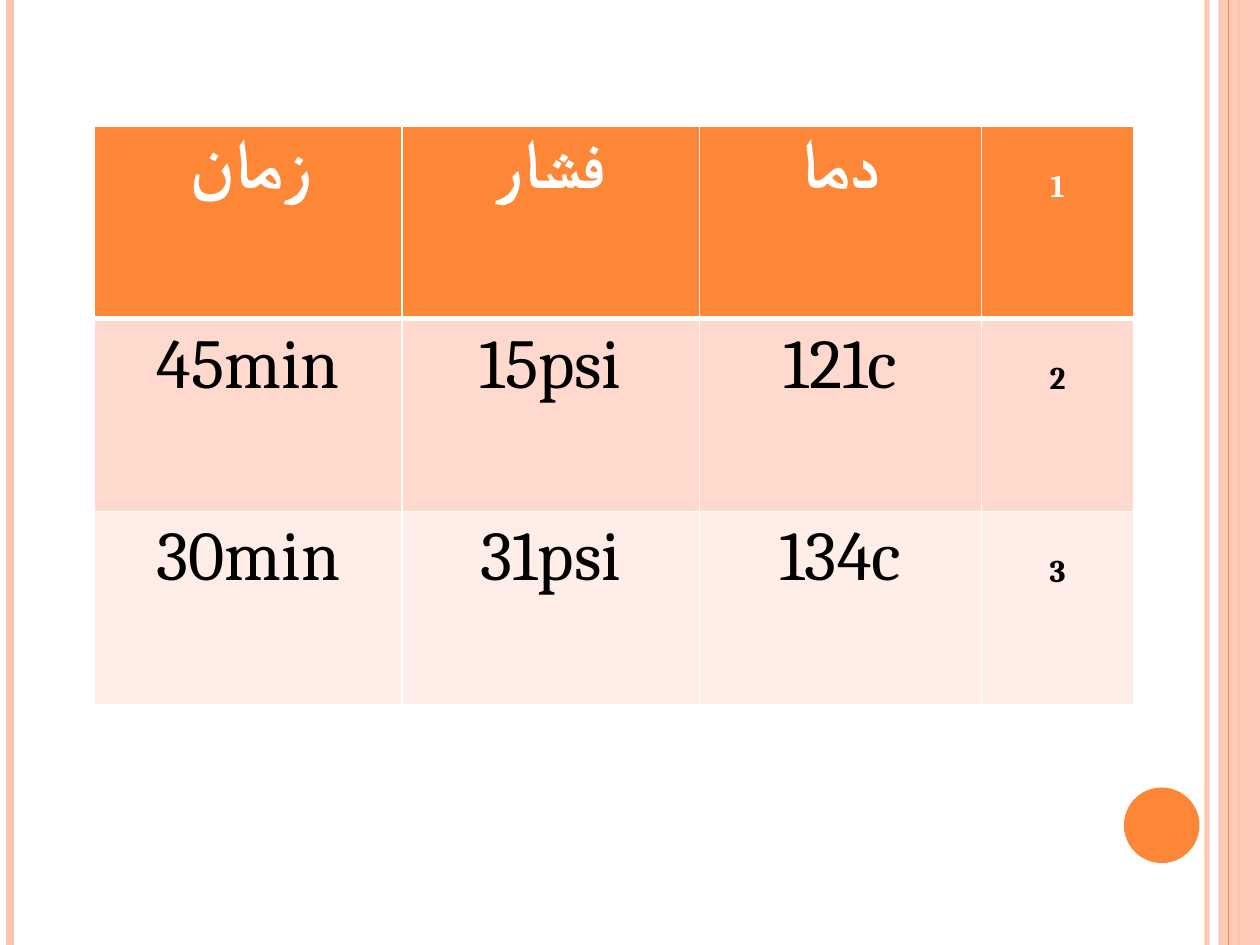
from dataclasses import dataclass

from lxml.etree import SubElement
from pptx import Presentation
from pptx.dml.color import RGBColor as RGB
from pptx.enum.shapes import MSO_CONNECTOR as CONN, MSO_SHAPE as SHAPE
from pptx.enum.text import PP_ALIGN as ALIGN
from pptx.oxml.ns import qn
from pptx.util import Inches, Pt


@dataclass(frozen=True)
class Theme:
    font: str = "Cambria"
    accent: str = "FE8637"
    tint: str = "FEC3AE"
    band_dark: str = "FFD9CE"
    band_light: str = "FFEDE8"
    white: str = "FFFFFF"
    black: str = "000000"
    value_size: int = 40
    index_size: int = 18


class SlideBuilder:
    def __init__(self, prs, theme):
        self.theme = theme
        self.slide = prs.slides.add_slide(prs.slide_layouts[6])

    def set_alpha(self, element, percent):
        color = next(element.iter(qn("a:srgbClr")))
        SubElement(color, qn("a:alpha"), val=str(percent * 1000))

    def vertical_line(self, x, color, width, alpha=100):
        line = self.slide.shapes.add_connector(
            CONN.STRAIGHT, Inches(x), 0, Inches(x), Inches(7.5))
        line.line.color.rgb = RGB.from_string(color)
        line.line.width = Pt(width)
        spPr = line._element.spPr
        if alpha < 100:
            self.set_alpha(spPr, alpha)
        SubElement(spPr, qn("a:effectLst"))

    def shape(self, kind, x, y, w, h, color, alpha=100):
        sp = self.slide.shapes.add_shape(
            kind, Inches(x), Inches(y), Inches(w), Inches(h))
        sp.shadow.inherit = False
        sp.fill.solid()
        sp.fill.fore_color.rgb = RGB.from_string(color)
        sp.line.fill.background()
        if alpha < 100:
            self.set_alpha(sp._element.spPr, alpha)

    def cell_border(self, cell, side, width):
        tcPr = cell._tc.get_or_add_tcPr()
        ln = SubElement(tcPr, qn(f"a:ln{side}"), w=str(Pt(width)))
        fill = SubElement(ln, qn("a:solidFill"))
        SubElement(fill, qn("a:srgbClr"), val=self.theme.white)

    def cell(self, cell, text, fill, color, size, bold, widths):
        for side in "LRTB":
            self.cell_border(cell, side, widths.get(side, 1))
        cell.fill.solid()
        cell.fill.fore_color.rgb = RGB.from_string(fill)
        cell.text = text
        p = cell.text_frame.paragraphs[0]
        p.alignment = ALIGN.CENTER
        p.font.name = self.theme.font
        p.font.size = Pt(size)
        p.font.bold = bold
        p.font.color.rgb = RGB.from_string(color)

    def table(self, x, y, col_widths, row_height, rows):
        t = self.theme
        fills = [t.accent, t.band_dark, t.band_light]
        table = self.slide.shapes.add_table(
            len(rows), len(col_widths), Inches(x), Inches(y),
            Inches(sum(col_widths)), Inches(row_height * len(rows))).table
        for column, width in zip(table.columns, col_widths):
            column.width = Inches(width)
        for i, row in enumerate(rows):
            table.rows[i].height = Inches(row_height)
            header = i == 0
            widths = {0: {"B": 3}, 1: {"T": 3}}.get(i, {})
            for j, text in enumerate(row):
                index = j == len(row) - 1
                cell = table.cell(i, j)
                self.cell(cell, text, fills[i],
                          t.white if header else t.black,
                          t.index_size if index else t.value_size,
                          header or index, widths)
                if index:
                    cell.margin_top = Inches(0.34)


def main():
    prs = Presentation()
    prs.slide_width, prs.slide_height = Inches(10), Inches(7.5)
    theme = Theme()
    s = SlideBuilder(prs, theme)
    s.vertical_line(9.58, theme.tint, 3, alpha=93)
    s.vertical_line(0.08, theme.tint, 4.5)
    s.vertical_line(9.83, theme.tint, 1.5)
    s.shape(SHAPE.RECTANGLE, 9.67, 0, 0.33, 7.5, theme.tint, alpha=87)
    s.vertical_line(9.75, theme.accent, 0.75)
    s.shape(SHAPE.OVAL, 8.92, 6.25, 0.6, 0.6, theme.accent)
    s.table(0.75, 1, [2.44, 2.36, 2.24, 1.21], 1.53, [
        ["زمان", "فشار", "دما", "1"],
        ["45min", "15psi", "121c", "2"],
        ["30min", "31psi", "134c", "3"],
    ])
    prs.save("out.pptx")


if __name__ == "__main__":
    main()
